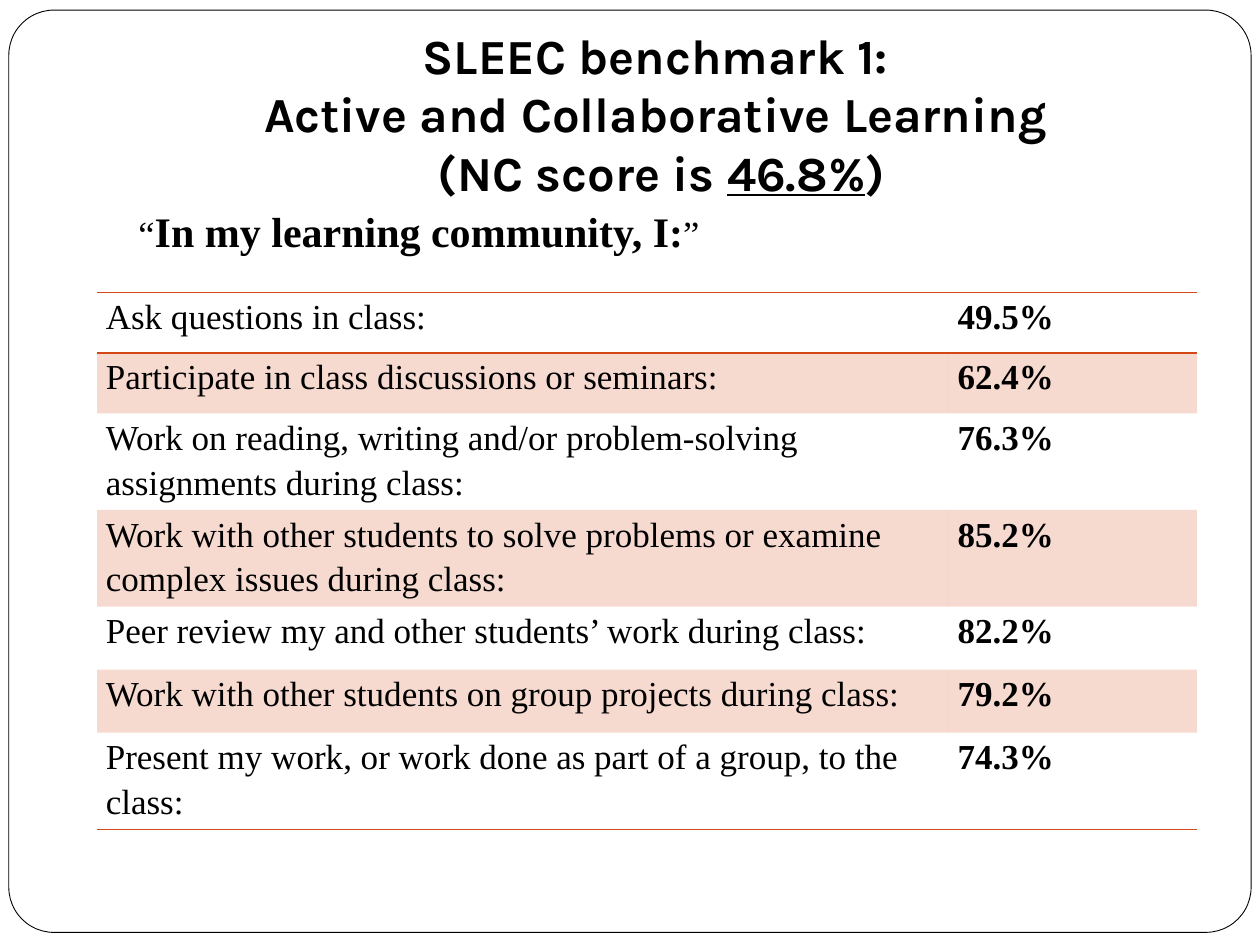
from lxml import etree
from pptx import Presentation, util as u
from pptx.dml.color import RGBColor
from pptx.enum import shapes, text
from pptx.oxml import ns

BLACK, WHITE, ACCENT = "000000", "FFFFFF", "D34817"
PLAIN_TABLE_STYLE = "{2D5ABB26-0587-4C30-8999-92F81FD0307C}"
SCORES = [
    ("Ask questions in class:", "49.5%"),
    ("Participate in class discussions or seminars:", "62.4%"),
    ("Work on reading, writing and/or problem-solving assignments during class:", "76.3%"),
    ("Work with other students to solve problems or examine complex issues during class:", "85.2%"),
    ("Peer review my and other students’ work during class:", "82.2%"),
    ("Work with other students on group projects during class:", "79.2%"),
    ("Present my work, or work done as part of a group, to the class:", "74.3%"),
]


def colour(value):
    return RGBColor.from_string(value)


def inches(values):
    return [u.Inches(value) for value in values]


class SurveySlide:
    """Holds the fonts and the slide that the elements are added to."""

    heading_font = "Karla"
    body_font = "Times New Roman"

    def __init__(self, slide):
        self.slide = slide

    def style(self, run, size, font, bold=False, underline=False):
        run.font.size = u.Pt(size)
        run.font.name = font
        run.font.bold = bold
        run.font.underline = underline
        run.font.color.rgb = colour(BLACK)

    def frame(self, box):
        border = self.slide.shapes.add_shape(
            shapes.MSO_SHAPE.ROUNDED_RECTANGLE, *inches(box))
        border.adjustments[0] = 0.049
        border.shadow.inherit = False
        border.fill.solid()
        border.fill.fore_color.rgb = colour(WHITE)
        border.line.color.rgb = colour(BLACK)
        border.line.width = u.Pt(0.5)

    def text_box(self, box):
        text_frame = self.slide.shapes.add_textbox(*inches(box)).text_frame
        text_frame.word_wrap = True
        return text_frame

    def title(self, box, wording, score, closing):
        heading = self.text_box(box)
        heading.vertical_anchor = text.MSO_ANCHOR.MIDDLE
        heading.margin_bottom = u.Inches(0.1)
        paragraph = heading.paragraphs[0]
        paragraph.text = wording
        paragraph.alignment = text.PP_ALIGN.CENTER
        for part in (score, closing):
            paragraph.add_run().text = part
        for run in paragraph.runs:
            self.style(run, 28, self.heading_font, True, run.text == score)

    def quotation(self, box, wording):
        paragraph = self.text_box(box).paragraphs[0]
        paragraph.space_before = u.Pt(5.8)
        properties = paragraph._p.get_or_add_pPr()
        properties.set("marL", str(u.Inches(0.3)))
        properties.set("indent", str(u.Inches(-0.3)))
        for part, size in (("“", 21), (wording, 24), ("”", 21)):
            run = paragraph.add_run()
            run.text = part
            self.style(run, size, self.body_font, part == wording)

    def table(self, box, widths, heights, rows):
        holder = self.slide.shapes.add_table(len(rows), len(widths), *inches(box))
        table = holder.table
        table.first_row = table.horz_banding = False
        table._tbl.tblPr.find(ns.qn("a:tableStyleId")).text = PLAIN_TABLE_STYLE
        for column, width in zip(table.columns, widths):
            column.width = u.Inches(width)
        ruled_sides = {0: "TB", len(rows) - 1: "B"}
        for r, (row, height) in enumerate(zip(rows, heights)):
            table.rows[r].height = u.Inches(height)
            for c, wording in enumerate(row):
                cell = table.cell(r, c)
                self.cell_text(cell, wording, bold=c == 1)
                self.cell_fill(cell, banded=r % 2 == 1)
                self.cell_borders(cell, ruled_sides.get(r, ""))
        holder.height = u.Inches(box[3])

    def cell_text(self, cell, wording, bold):
        cell.margin_left = cell.margin_right = u.Inches(0.07)
        cell.margin_top = cell.margin_bottom = 0
        paragraph = cell.text_frame.paragraphs[0]
        paragraph.text = wording
        paragraph.line_spacing = 1.15
        paragraph.space_after = u.Pt(10)
        self.style(paragraph.runs[0], 20, self.body_font, bold)

    def cell_fill(self, cell, banded):
        if not banded:
            cell.fill.background()
            return
        cell.fill.solid()
        cell.fill.fore_color.rgb = colour(ACCENT)
        shade = cell._tc.tcPr.find(".//" + ns.qn("a:srgbClr"))
        etree.SubElement(shade, ns.qn("a:alpha"), val="20000")

    def cell_borders(self, cell, sides):
        """Rule the given sides; border elements must precede the fill."""
        for position, side in enumerate(sides):
            border = etree.Element(ns.qn("a:ln" + side), w=str(u.Pt(1)))
            fill = etree.SubElement(border, ns.qn("a:solidFill"))
            etree.SubElement(fill, ns.qn("a:srgbClr"), val=ACCENT)
            cell._tc.tcPr.insert(position, border)


def main():
    deck = Presentation()
    deck.slide_width, deck.slide_height = inches((10, 7.5))
    survey = SurveySlide(deck.slides.add_slide(deck.slide_layouts[6]))
    survey.frame((0.07, 0.08, 9.86, 7.32))
    survey.title(
        (1, 0.3, 8.5, 1.25),
        "SLEEC benchmark 1: \vActive and Collaborative Learning \v(NC score is ",
        "46.8%", ")")
    survey.quotation((1, 1.58, 8.5, 5), "In my learning community, I:")
    survey.table((0.77, 2.32, 8.73, 4.25), (6.76, 1.97),
                 [0.48] * 2 + [0.5] * 5, SCORES)
    deck.save("out.pptx")


if __name__ == "__main__":
    main()
